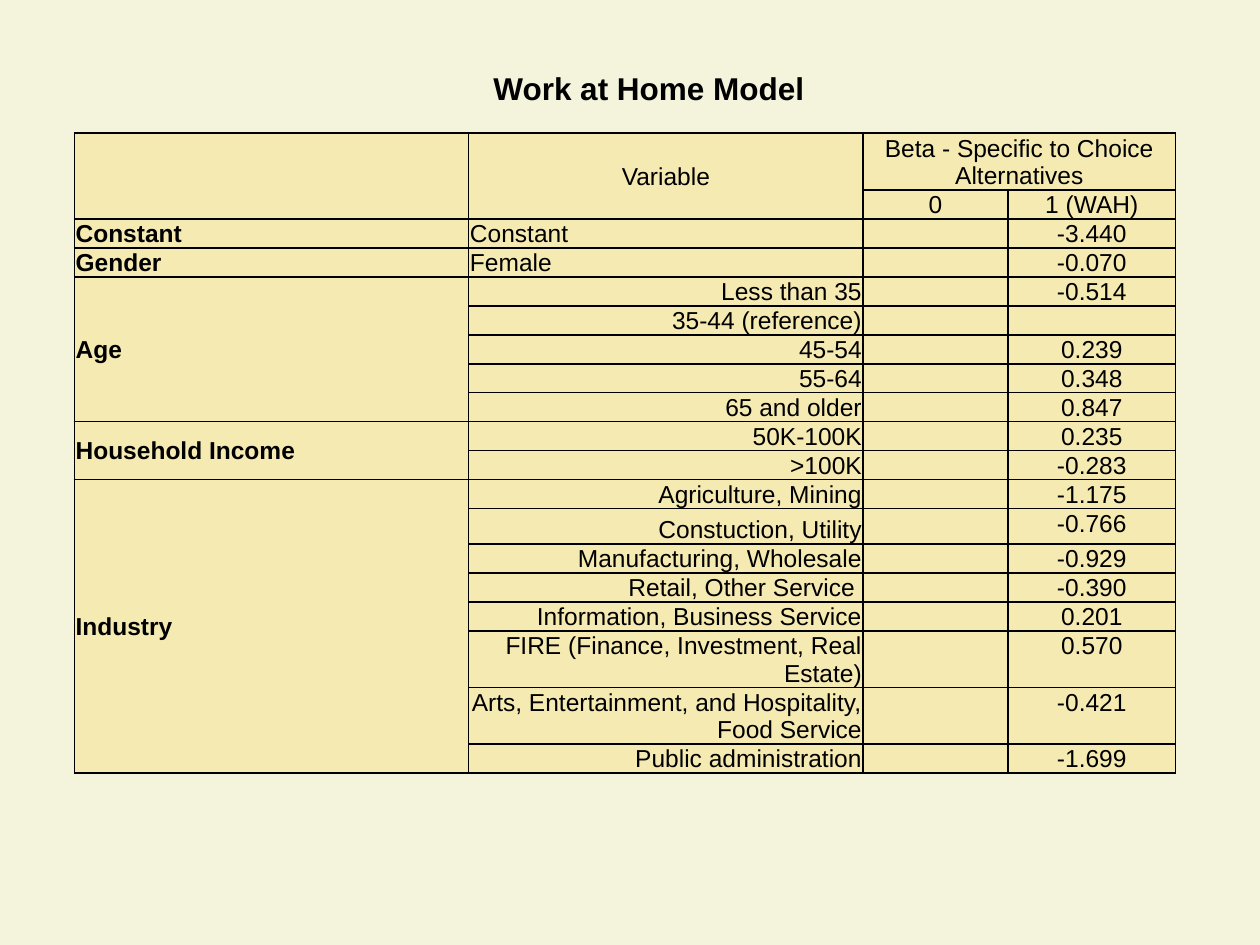
from lxml import etree
from pptx import Presentation
from pptx import util as u
from pptx.dml.color import RGBColor
from pptx.enum import text
from pptx.oxml import ns

LEFT, MID, RIGHT = text.PP_ALIGN.LEFT, text.PP_ALIGN.CENTER, text.PP_ALIGN.RIGHT
TOP, CENTER, BASE = (text.MSO_ANCHOR.TOP, text.MSO_ANCHOR.MIDDLE,
                     text.MSO_ANCHOR.BOTTOM)

# group, alignment of its variables, [(variable, beta)]
GROUPS = [
    ("Constant", LEFT, [("Constant", "-3.440")]),
    ("Gender", LEFT, [("Female", "-0.070")]),
    ("Age", RIGHT, [
        ("Less than 35", "-0.514"), ("35-44 (reference)", ""),
        ("45-54", "0.239"), ("55-64", "0.348"), ("65 and older", "0.847")]),
    ("Household Income", RIGHT, [("50K-100K", "0.235"), (">100K", "-0.283")]),
    ("Industry", RIGHT, [
        ("Agriculture, Mining", "-1.175"),
        ("Constuction, Utility", "-0.766"),
        ("Manufacturing, Wholesale", "-0.929"),
        ("Retail, Other Service ", "-0.390"),
        ("Information, Business Service", "0.201"),
        ("FIRE (Finance, Investment, Real Estate)", "0.570"),
        ("Arts, Entertainment, and Hospitality, Food Service", "-0.421"),
        ("Public administration", "-1.699")]),
]
COLS = [3.13, 3.13, 1.15, 1.33]
ROW, TALL = 0.23, 0.45
HIGH = {0: TALL, 12: 0.28, 16: TALL, 17: TALL}  # rows that are not ROW high


def color(code):
    return RGBColor.from_string(code)


class Deck:
    """Holds the style and the current slide."""
    face, ink, paper, tint = "Arial", "000000", "F3F4DB", "FFC000"
    alpha, size, line = 19, 14, 1

    def __init__(self, wide, high):
        self.prs = Presentation()
        self.prs.slide_width, self.prs.slide_height = u.Inches(wide), u.Inches(high)
        self.slide = self.prs.slides.add_slide(self.prs.slide_layouts[5])
        back = self.slide.background.fill
        back.solid()
        back.fore_color.rgb = color(self.paper)

    def box(self, x, y, w, h):
        """Turn shares of the slide into lengths."""
        wide, high = self.prs.slide_width, self.prs.slide_height
        return int(x * wide), int(y * high), int(w * wide), int(h * high)

    def style(self, par, size, align, bold=False):
        par.alignment = align
        font = par.font
        font.name, font.size, font.bold = self.face, u.Pt(size), bold
        font.color.rgb = color(self.ink)

    def title(self, words, *area):
        shape = self.slide.shapes.title
        shape.left, shape.top, shape.width, shape.height = self.box(*area)
        frame = shape.text_frame
        frame.text, frame.word_wrap = words, False
        frame.auto_size = text.MSO_AUTO_SIZE.NONE
        frame.vertical_anchor = CENTER
        self.style(frame.paragraphs[0], 18, MID, True)

    def table(self, x, y, cols, rows):
        area = self.box(x, y, 0.1, 0.1)
        grid = self.slide.shapes.add_table(len(rows), len(cols), *area).table
        grid.first_row = grid.horz_banding = False
        for col, wide in zip(grid.columns, cols):
            col.width = u.Inches(wide)
        for row, high in zip(grid.rows, rows):
            row.height = u.Inches(high)
        for cell in grid.iter_cells():
            self.cell(cell)
        return grid

    def cell(self, cell, words="", align=MID, anchor=TOP, bold=False):
        cell.text, cell.vertical_anchor = words, anchor
        cell.margin_left = cell.margin_right = cell.margin_top = u.Inches(0.01)
        cell.margin_bottom = 0
        par = cell.text_frame.paragraphs[0]
        self.style(par, self.size, align, bold)
        if not words:  # an empty cell takes its height from the end mark
            par._p.get_or_add_endParaRPr().set("sz", str(self.size * 100))
        cell.fill.solid()
        cell.fill.fore_color.rgb = color(self.tint)
        self.frame(cell._tc.tcPr)

    def frame(self, props):
        """Make the fill see-through and draw the four borders."""
        tone = props.find(".//" + ns.qn("a:srgbClr"))
        etree.SubElement(tone, ns.qn("a:alpha"), val=str(self.alpha * 1000))
        for old in props.xpath("a:lnL|a:lnR|a:lnT|a:lnB"):
            props.remove(old)
        for i, side in enumerate("LRTB"):
            edge = etree.Element(ns.qn("a:ln" + side), w=str(u.Pt(self.line)))
            fill = etree.SubElement(edge, ns.qn("a:solidFill"))
            etree.SubElement(fill, ns.qn("a:srgbClr"), val=self.ink)
            props.insert(i, edge)


def main():
    deck = Deck(10, 7.5)
    deck.title("Work at Home Model", 0.38, 0.065, 0.27, 0.055)
    count = 2 + sum(len(items) for _, _, items in GROUPS)
    grid = deck.table(0.059, 0.141, COLS, [HIGH.get(i, ROW) for i in range(count)])

    for a, b in [((0, 0), (1, 0)), ((0, 1), (1, 1)), ((0, 2), (0, 3))]:
        grid.cell(*a).merge(grid.cell(*b))
    deck.cell(grid.cell(0, 1), "Variable", anchor=CENTER)
    deck.cell(grid.cell(0, 2), "Beta - Specific to Choice Alternatives", anchor=BASE)
    for col, name in enumerate(["0", "1 (WAH)"], 2):
        deck.cell(grid.cell(1, col), name, anchor=BASE)

    row = 2
    for group, align, items in GROUPS:
        head, last = grid.cell(row, 0), row + len(items) - 1
        if last > row:
            head.merge(grid.cell(last, 0))
        deck.cell(head, group, LEFT, CENTER, True)
        for name, beta in items:
            deck.cell(grid.cell(row, 1), name, align, BASE)
            deck.cell(grid.cell(row, 3), beta)
            row += 1
    deck.prs.save("out.pptx")


if __name__ == "__main__":
    main()
